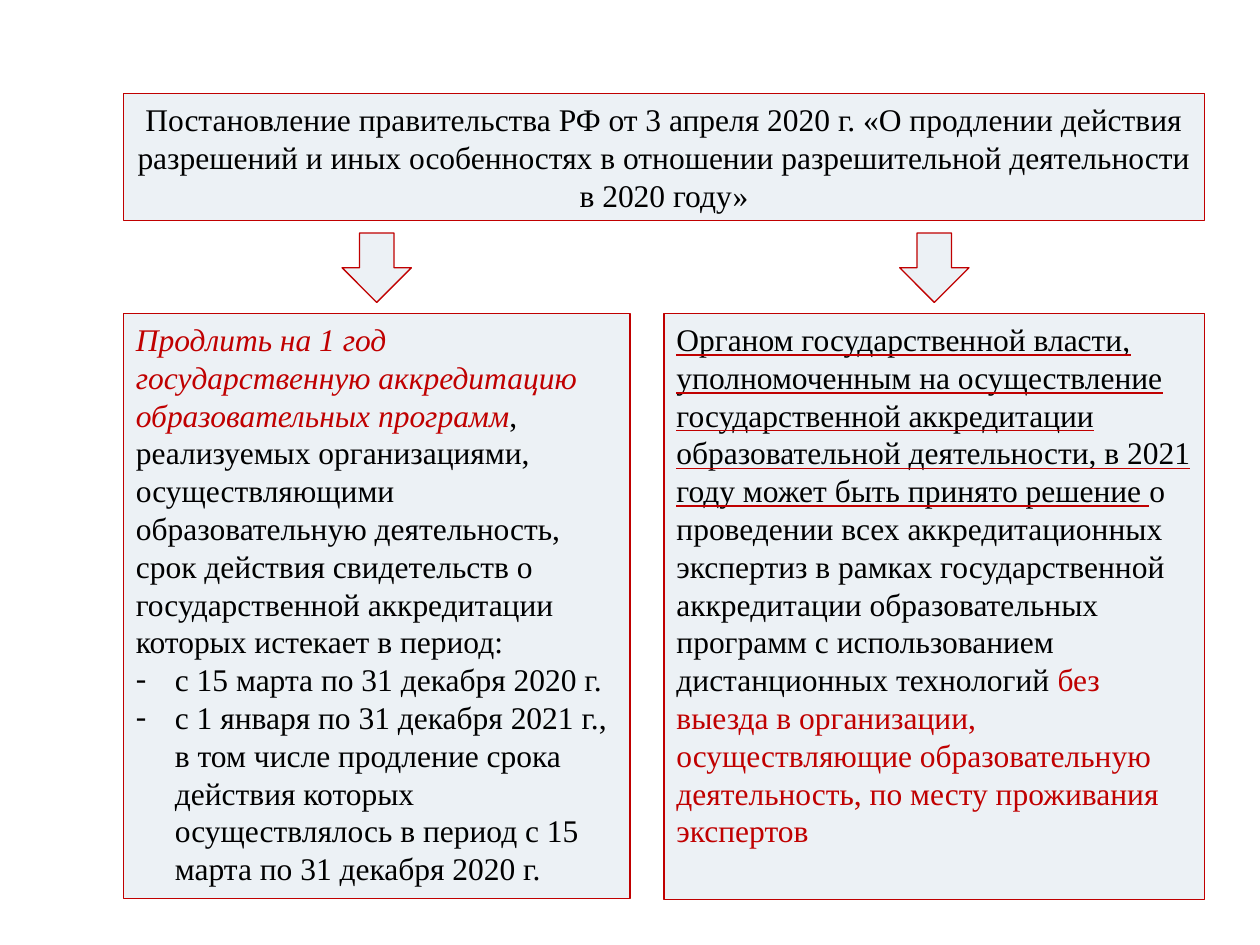
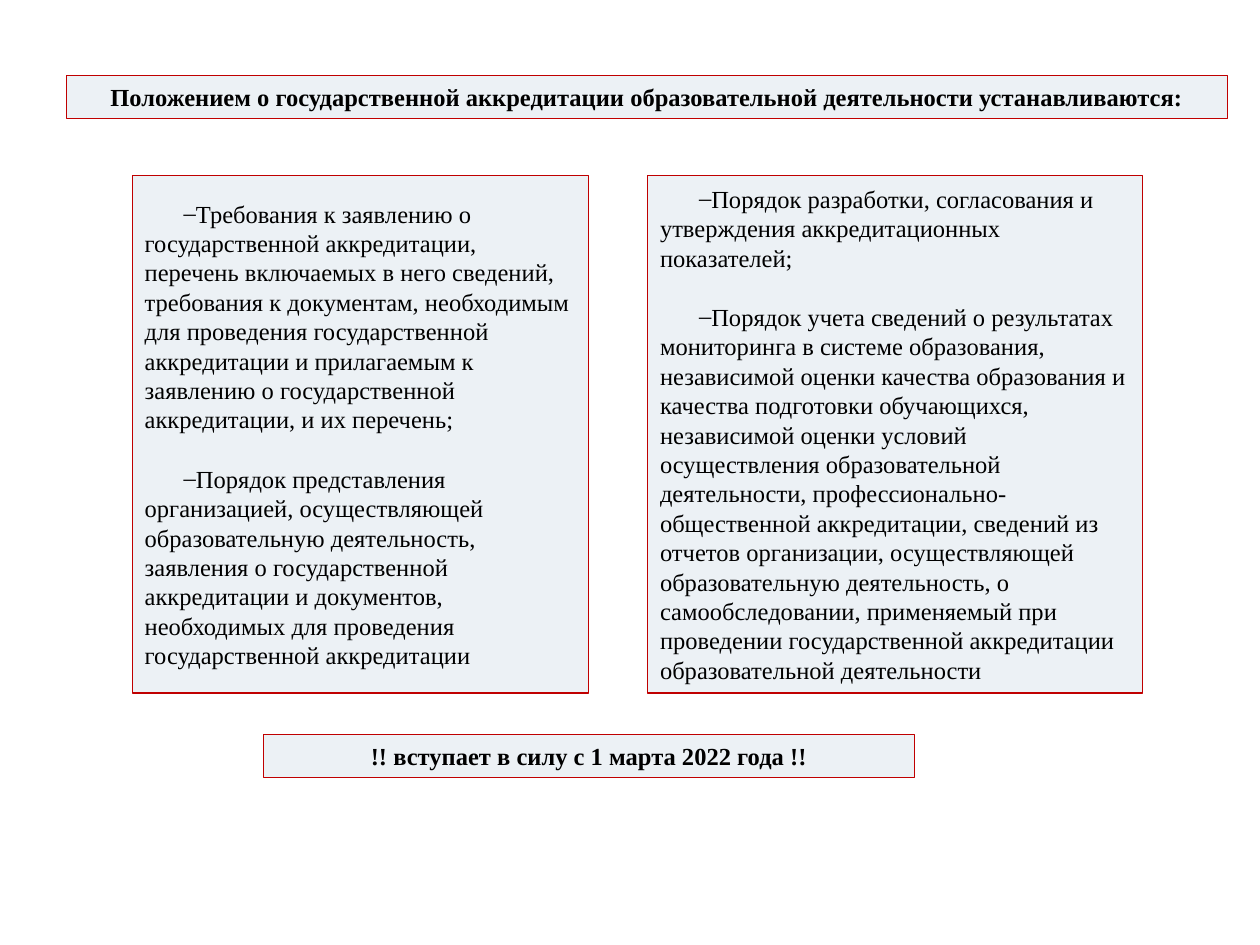
from dataclasses import dataclass

from lxml import etree
from pptx import Presentation
from pptx.dml.color import RGBColor
from pptx.enum.shapes import MSO_SHAPE
from pptx.enum.text import MSO_ANCHOR, MSO_AUTO_SIZE, PP_ALIGN
from pptx.oxml.ns import qn
from pptx.util import Inches, Pt

RECTANGLE = MSO_SHAPE.RECTANGLE
DOWN_ARROW = MSO_SHAPE.DOWN_ARROW
TOP = MSO_ANCHOR.TOP
MIDDLE = MSO_ANCHOR.MIDDLE
LEFT = PP_ALIGN.LEFT
CENTER = PP_ALIGN.CENTER
NO_AUTOFIT = MSO_AUTO_SIZE.NONE

FONT = "Times New Roman"
PALE = "ECF1F5"
RED = "C00000"
BLACK = "000000"
INDENT = 0.31
ARROW_SIZE = 0.55
TITLE_ONLY = 5


@dataclass
class Phrase:
    text: str
    color: str = BLACK
    bold: bool = False
    italic: bool = False
    underline: bool = False


@dataclass
class Item:
    phrases: list
    bullet: str = ""
    margin: float = 0
    indent: float = 0
    gap: float = 0
    align: int = LEFT


def rgb(color):
    return RGBColor.from_string(color)


def style_panel(panel):
    panel.fill.solid()
    panel.fill.fore_color.rgb = rgb(PALE)
    panel.line.color.rgb = rgb(RED)
    panel.line.width = Pt(0.75)


def underline_in_red(run):
    run.font.underline = True
    underline_fill = etree.Element(qn("a:uFill"))
    solid = etree.SubElement(underline_fill, qn("a:solidFill"))
    etree.SubElement(solid, qn("a:srgbClr"), val=RED)
    run.font._element.find(qn("a:latin")).addprevious(underline_fill)


def write_phrase(paragraph, phrase, size):
    run = paragraph.add_run()
    run.text = phrase.text
    run.font.name = FONT
    run.font.size = Pt(size)
    run.font.color.rgb = rgb(phrase.color)
    run.font.bold = phrase.bold
    run.font.italic = phrase.italic
    if phrase.underline:
        underline_in_red(run)


def set_bullet(paragraph, item):
    properties = paragraph._p.get_or_add_pPr()
    properties.set("marL", str(Inches(item.margin)))
    properties.set("indent", str(Inches(item.indent)))
    etree.SubElement(properties, qn("a:buFont"), typeface=FONT)
    etree.SubElement(properties, qn("a:buChar"), char=item.bullet)


def write_items(frame, items, size, anchor):
    frame.word_wrap = True
    frame.auto_size = NO_AUTOFIT
    frame.vertical_anchor = anchor
    for index, item in enumerate(items):
        paragraph = frame.add_paragraph() if index else frame.paragraphs[0]
        paragraph.alignment = item.align
        paragraph.space_before = Pt(item.gap)
        for phrase in item.phrases:
            write_phrase(paragraph, phrase, size)
        if item.bullet:
            set_bullet(paragraph, item)


def add_shape(slide, kind, left, top, width, height):
    shape = slide.shapes.add_shape(
        kind, Inches(left), Inches(top), Inches(width), Inches(height))
    shape.shadow.inherit = False
    style_panel(shape)
    return shape


def add_panel(slide, box, items, size, anchor=TOP):
    panel = add_shape(slide, RECTANGLE, *box)
    write_items(panel.text_frame, items, size, anchor)


def add_arrow_above(slide, box, top):
    left, _, width, _ = box
    add_shape(slide, DOWN_ARROW, left + (width - ARROW_SIZE) / 2, top,
              ARROW_SIZE, ARROW_SIZE)


def add_titled_slide(deck, box, text, size, bold=False):
    slide = deck.slides.add_slide(deck.slide_layouts[TITLE_ONLY])
    title = slide.shapes.title
    title.left, title.top, title.width, title.height = map(Inches, box)
    style_panel(title)
    heading = Item([Phrase(text, bold=bold)], align=CENTER)
    write_items(title.text_frame, [heading], size, MIDDLE)
    return slide


def period(text):
    return Item([Phrase(text)], "-", INDENT, -INDENT)


def provisions(*texts):
    return [Item([Phrase(text)], "–", 0, INDENT, 17 if index else 0)
            for index, text in enumerate(texts)]


def build_extension_slide(deck):
    size = 18
    slide = add_titled_slide(
        deck, (0.98, 0.74, 8.58, 1.01),
        "Постановление правительства РФ от 3 апреля 2020 г. «О продлении "
        "действия разрешений и иных особенностях в отношении разрешительной "
        "деятельности в 2020 году»", size)
    extension = [
        Item([
            Phrase("Продлить на 1 год государственную аккредитацию "
                   "образовательных программ", RED, italic=True),
            Phrase(", реализуемых организациями, осуществляющими "
                   "образовательную деятельность, срок действия свидетельств "
                   "о государственной аккредитации которых истекает в период:"),
        ]),
        period("с 15 марта по 31 декабря 2020 г."),
        period("с 1 января по 31 декабря 2021 г., в том числе продление срока "
               "действия которых осуществлялось в период с 15 марта по "
               "31 декабря 2020 г."),
    ]
    remote_review = [Item([
        Phrase("Органом государственной власти, уполномоченным на "
               "осуществление государственной аккредитации образовательной "
               "деятельности, в 2021 году может быть принято решение ",
               underline=True),
        Phrase("о проведении всех аккредитационных экспертиз в рамках "
               "государственной аккредитации образовательных программ с "
               "использованием дистанционных технологий "),
        Phrase("без выезда в организации, осуществляющие образовательную "
               "деятельность, по месту проживания экспертов", RED),
    ])]
    columns = [((0.98, 2.49, 4.02, 4.64), extension),
               ((5.27, 2.49, 4.29, 4.65), remote_review)]
    for box, items in columns:
        add_panel(slide, box, items, size)
        add_arrow_above(slide, box, 1.85)


def build_regulation_slide(deck):
    size = 14
    slide = add_titled_slide(
        deck, (0.53, 0.6, 9.21, 0.34),
        "Положением о государственной аккредитации образовательной "
        "деятельности устанавливаются:", size, bold=True)
    application = provisions(
        "Требования к заявлению о государственной аккредитации, перечень "
        "включаемых в него сведений, требования к документам, необходимым для "
        "проведения государственной аккредитации и прилагаемым к заявлению о "
        "государственной аккредитации, и их перечень;",
        "Порядок представления организацией, осуществляющей образовательную "
        "деятельность, заявления о государственной аккредитации и документов, "
        "необходимых для проведения государственной аккредитации")
    indicators = provisions(
        "Порядок разработки, согласования и утверждения аккредитационных "
        "показателей;",
        "Порядок учета сведений о результатах мониторинга в системе "
        "образования, независимой оценки качества образования и качества "
        "подготовки обучающихся, независимой оценки условий осуществления "
        "образовательной деятельности, профессионально-общественной "
        "аккредитации, сведений из отчетов организации, осуществляющей "
        "образовательную деятельность, о самообследовании, применяемый при "
        "проведении государственной аккредитации образовательной деятельности")
    effective_date = [Item(
        [Phrase("!! вступает в силу с 1 марта 2022 года !!", bold=True)],
        align=CENTER)]
    add_panel(slide, (1.05, 1.39, 3.62, 4.11), application, size, MIDDLE)
    add_panel(slide, (5.14, 1.39, 3.93, 4.11), indicators, size, MIDDLE)
    add_panel(slide, (2.09, 5.83, 5.17, 0.34), effective_date, size, MIDDLE)


def main():
    deck = Presentation()
    deck.slide_width = Inches(10)
    deck.slide_height = Inches(7.5)
    build_extension_slide(deck)
    build_regulation_slide(deck)
    deck.save("out.pptx")


if __name__ == "__main__":
    main()
